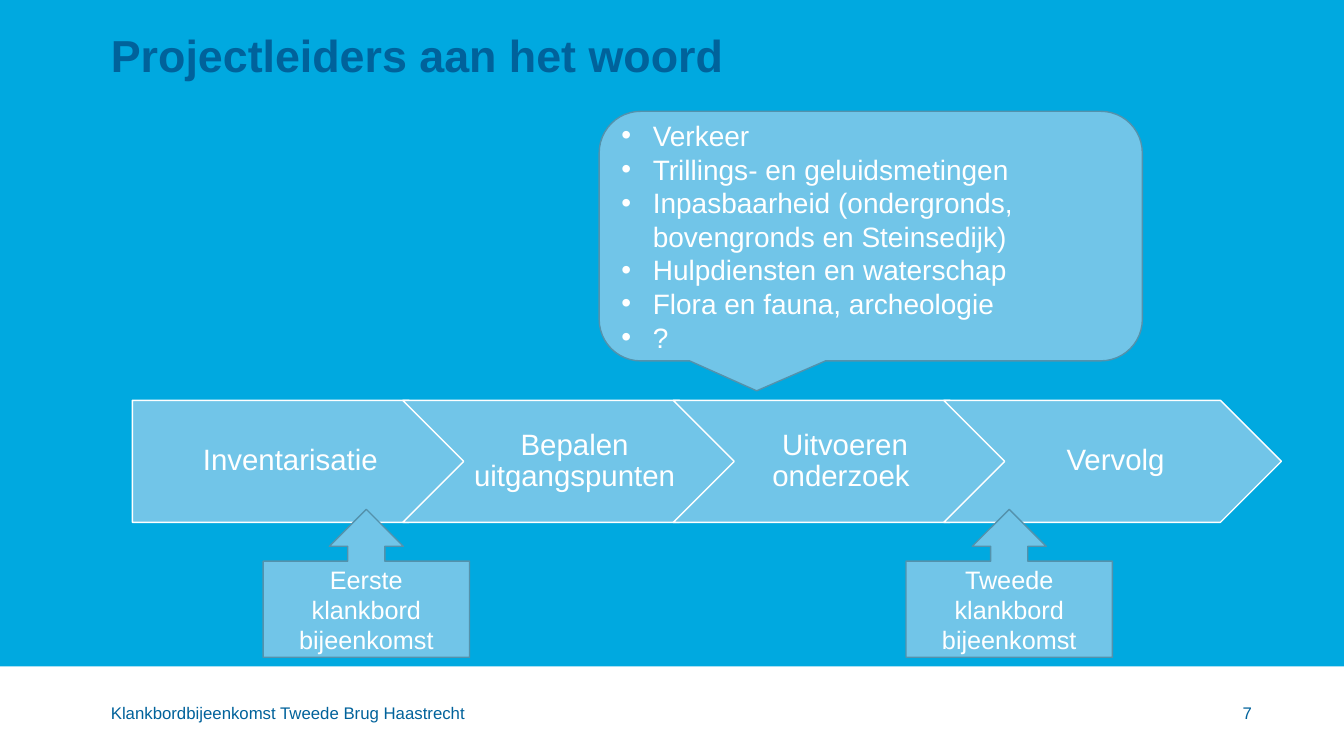
from dataclasses import dataclass

from lxml.etree import SubElement
from pptx import Presentation
from pptx.dml.color import RGBColor
from pptx.enum.shapes import MSO_SHAPE
from pptx.enum.text import MSO_ANCHOR, PP_ALIGN
from pptx.oxml.ns import qn
from pptx.shapes.autoshape import Shape
from pptx.slide import Slide
from pptx.text.text import TextFrame
from pptx.util import Pt


@dataclass(frozen=True)
class Theme:
    font: str = "Arial"
    background: str = "00A9E0"
    dark: str = "00629B"
    light: str = "71C5E8"
    edge: str = "5492AC"
    white: str = "FFFFFF"
    title_size: float = 32
    step_size: float = 21
    topic_size: float = 20
    meeting_size: float = 18
    footer_size: float = 12


@dataclass(frozen=True)
class Box:
    left: float
    top: float
    width: float
    height: float


@dataclass(frozen=True)
class Label:
    text: str
    box: Box
    size: float
    bold: bool = False
    align: PP_ALIGN = PP_ALIGN.LEFT
    line_spacing: float = 1.0
    inset_top: float = 0


@dataclass(frozen=True)
class Step:
    text: str
    outline: MSO_SHAPE = MSO_SHAPE.CHEVRON
    inset_left: float = 6.5


@dataclass(frozen=True)
class Meeting:
    text: str
    left: float


THEME = Theme()

LABELS = [
    Label("Projectleiders aan het woord", Box(79.2, 20.9, 814.3, 51.8),
          THEME.title_size, bold=True, line_spacing=0.9, inset_top=2.9),
    Label("7", Box(830.9, 501.8, 63.4, 14.4), THEME.footer_size,
          align=PP_ALIGN.RIGHT),
    Label("Klankbordbijeenkomst Tweede Brug Haastrecht",
          Box(79.2, 501.8, 400.3, 28.8), THEME.footer_size),
]

STEPS = [
    Step("Inventarisatie", MSO_SHAPE.PENTAGON, 8.6),
    Step("Bepalen uitgangspunten"),
    Step("Uitvoeren onderzoek "),
    Step("Vervolg"),
]
FIRST_STEP = Box(94.5, 286, 241.2, 87.1)
STEP_PITCH = 193.2

MEETINGS = [
    Meeting("Eerste klankbord bijeenkomst", 188),
    Meeting("Tweede klankbord bijeenkomst", 647.2),
]

TOPICS = [
    "Verkeer",
    "Trillings- en geluidsmetingen ",
    "Inpasbaarheid (ondergronds, bovengronds en Steinsedijk)",
    "Hulpdiensten en waterschap",
    "Flora en fauna, archeologie",
    "?",
]
TOPIC_INDENT = 22.5


def lengths(box: Box) -> tuple[Pt, Pt, Pt, Pt]:
    return Pt(box.left), Pt(box.top), Pt(box.width), Pt(box.height)


def write(frame: TextFrame, lines: list[str], size: float, color: str,
          align: PP_ALIGN, bold: bool = False, line_spacing: float = 1.0) -> None:
    frame.word_wrap = True
    for index, line in enumerate(lines):
        paragraph = frame.paragraphs[0] if index == 0 else frame.add_paragraph()
        paragraph.alignment = align
        paragraph.line_spacing = line_spacing
        run = paragraph.add_run()
        run.text = line
        run.font.color.rgb = RGBColor.from_string(color)
        for name, value in {"name": THEME.font, "size": Pt(size),
                            "bold": bold}.items():
            setattr(run.font, name, value)


def set_insets(frame: TextFrame, left: float, top: float,
               right: float, bottom: float) -> None:
    for side, inset in {"left": left, "top": top,
                        "right": right, "bottom": bottom}.items():
        setattr(frame, f"margin_{side}", Pt(inset))


def add_figure(slide: Slide, outline: MSO_SHAPE, box: Box, fill: str,
               edge: str | None) -> Shape:
    """Add a flat preset shape with its text anchored in the middle."""
    figure = slide.shapes.add_shape(outline, *lengths(box))
    figure.shadow.inherit = False
    figure.fill.solid()
    figure.fill.fore_color.rgb = RGBColor.from_string(fill)
    if edge is None:
        figure.line.fill.background()
    else:
        figure.line.color.rgb = RGBColor.from_string(edge)
        figure.line.width = Pt(1)
    figure.text_frame.vertical_anchor = MSO_ANCHOR.MIDDLE
    return figure


def add_label(slide: Slide, label: Label) -> None:
    frame = slide.shapes.add_textbox(*lengths(label.box)).text_frame
    set_insets(frame, 0, label.inset_top, 0, 0)
    write(frame, [label.text], label.size, THEME.dark, label.align,
          label.bold, label.line_spacing)


def add_step(slide: Slide, step: Step, index: int) -> None:
    box = Box(FIRST_STEP.left + index * STEP_PITCH, FIRST_STEP.top,
              FIRST_STEP.width, FIRST_STEP.height)
    frame = add_figure(slide, step.outline, box, THEME.light,
                       THEME.white).text_frame
    set_insets(frame, step.inset_left, 4.3, 2.2, 4.3)
    write(frame, [step.text], THEME.step_size, THEME.white,
          PP_ALIGN.CENTER, line_spacing=0.9)


def add_meeting(slide: Slide, meeting: Meeting) -> None:
    box = Box(meeting.left, 363.8, 147.4, 105.7)
    figure = add_figure(slide, MSO_SHAPE.UP_ARROW_CALLOUT, box,
                        THEME.light, THEME.edge)
    write(figure.text_frame, [meeting.text], THEME.meeting_size,
          THEME.white, PP_ALIGN.CENTER)


def add_topics(slide: Slide) -> None:
    bubble = add_figure(slide, MSO_SHAPE.ROUNDED_RECTANGULAR_CALLOUT,
                        Box(428, 79.5, 388, 178.3), THEME.light, THEME.edge)
    bubble.adjustments[0] = -0.21
    bubble.adjustments[1] = 0.62
    write(bubble.text_frame, TOPICS, THEME.topic_size, THEME.white,
          PP_ALIGN.LEFT)
    for paragraph in bubble.text_frame.paragraphs:
        properties = paragraph._p.get_or_add_pPr()
        properties.set("marL", str(Pt(TOPIC_INDENT)))
        properties.set("indent", str(-Pt(TOPIC_INDENT)))
        SubElement(properties, qn("a:buFont"), typeface=THEME.font)
        SubElement(properties, qn("a:buChar"), char="•")


def main() -> None:
    deck = Presentation()
    deck.slide_width, deck.slide_height = Pt(960), Pt(540)
    slide = deck.slides.add_slide(deck.slide_layouts[6])
    slide.background.fill.solid()
    slide.background.fill.fore_color.rgb = RGBColor.from_string(THEME.background)

    add_figure(slide, MSO_SHAPE.RECTANGLE, Box(0, 476, 960, 64),
               THEME.white, None)
    for label in LABELS:
        add_label(slide, label)
    for index, step in enumerate(STEPS):
        add_step(slide, step, index)
    for meeting in MEETINGS:
        add_meeting(slide, meeting)
    add_topics(slide)
    deck.save("out.pptx")


if __name__ == "__main__":
    main()
